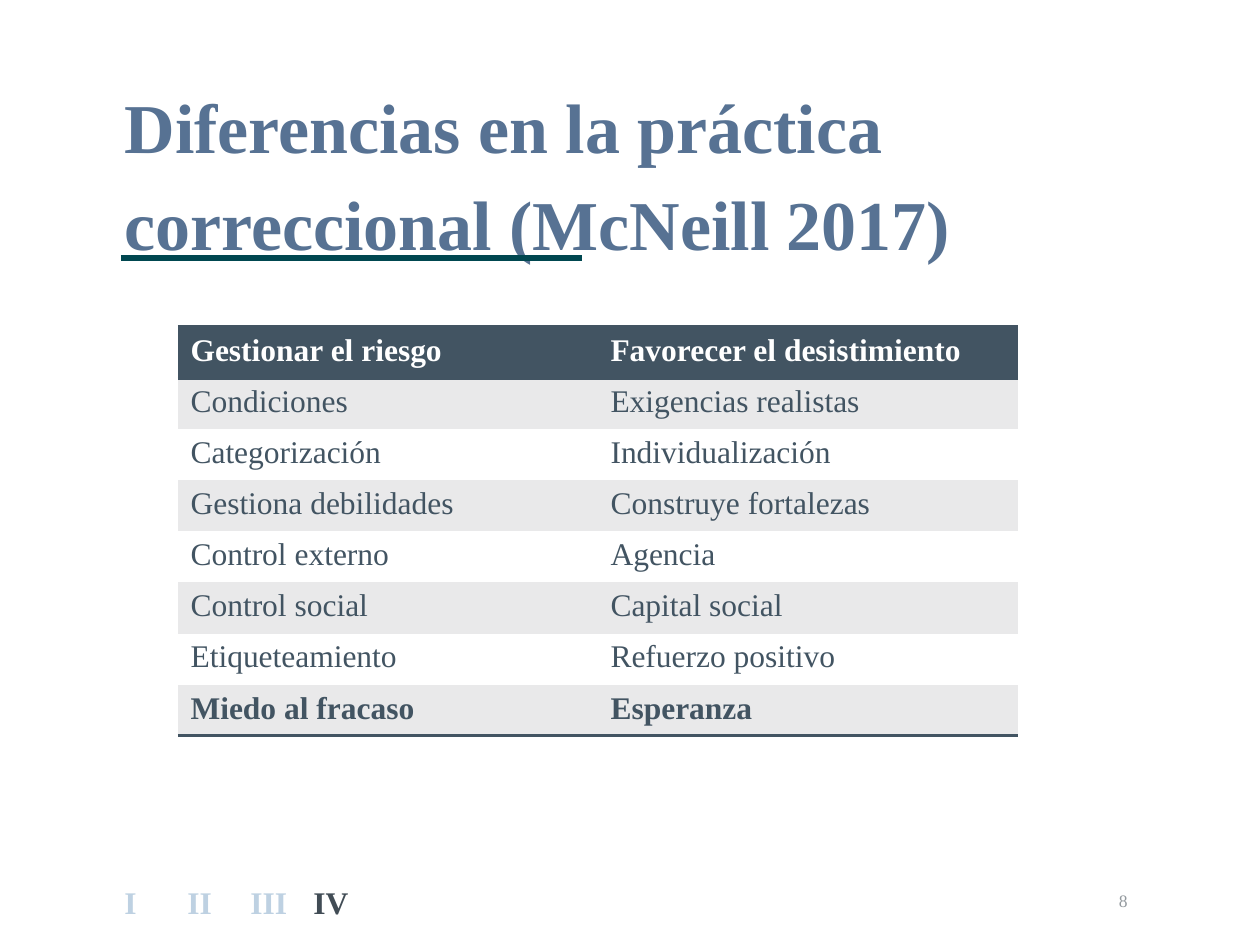
from lxml import etree
from pptx import Presentation
from pptx import util as u
from pptx.dml.color import RGBColor
from pptx.enum import shapes, text
from pptx.oxml.ns import qn

PX = 914400 / 126
FONT = "Times New Roman"
BLUE = RGBColor(0x57, 0x72, 0x93)
TEAL = RGBColor(0x00, 0x47, 0x50)
SLATE = RGBColor(0x42, 0x54, 0x62)
BAND = RGBColor(0xE9, 0xE9, 0xEA)
WHITE = RGBColor(0xFF, 0xFF, 0xFF)
PALE = RGBColor(0xBE, 0xD1, 0xE2)
DARK = RGBColor(0x41, 0x4C, 0x55)
GRAY = RGBColor(0x93, 0x99, 0x9E)

ROWS = [
    ("Gestionar el riesgo", "Favorecer el desistimiento"),
    ("Condiciones", "Exigencias realistas"),
    ("Categorización", "Individualización"),
    ("Gestiona debilidades", "Construye fortalezas"),
    ("Control externo", "Agencia"),
    ("Control social", "Capital social"),
    ("Etiqueteamiento", "Refuerzo positivo"),
    ("Miedo al fracaso", "Esperanza"),
]


def px(*vals):
    return [u.Emu(round(v * PX)) for v in vals]


def write(para, words, size=18, color=SLATE, bold=False):
    """Add one formatted run to a paragraph."""
    run = para.add_run()
    run.text = words
    run.font.name = FONT
    run.font.size = u.Pt(size)
    run.font.bold = bold
    run.font.color.rgb = color


def add_title(slide, x, y, w, h):
    title = slide.shapes.title
    title.left, title.top, title.width, title.height = px(x, y, w, h)
    frame = title.text_frame
    frame.auto_size = text.MSO_AUTO_SIZE.NONE
    frame.vertical_anchor = text.MSO_ANCHOR.TOP
    frame.margin_top, = px(12)
    para = frame.paragraphs[0]
    para.alignment = text.PP_ALIGN.LEFT
    para.line_spacing = 1.15
    write(para, "Diferencias en la práctica correccional (McNeill 2017)",
          size=40, color=BLUE, bold=True)


def add_rule(slide, x, y, w):
    line = slide.shapes.add_connector(
        shapes.MSO_CONNECTOR.STRAIGHT, *px(x, y, x + w, y))
    line.line.color.rgb = TEAL
    line.line.width = u.Pt(3)
    etree.SubElement(line._element.spPr, qn("a:effectLst"))


def add_edge(cell, side):
    """Draw a slate border on one side ('T' or 'B') of a cell."""
    props = cell._tc.get_or_add_tcPr()
    edge = etree.SubElement(props, qn(f"a:ln{side}"), w=str(u.Pt(2)))
    fill = etree.SubElement(edge, qn("a:solidFill"))
    etree.SubElement(fill, qn("a:srgbClr"), val=str(SLATE))


def add_grid(slide, x, y, w, h):
    last = len(ROWS) - 1
    grid = slide.shapes.add_table(len(ROWS), 2, *px(x, y, w, h)).table
    style = grid._tbl.tblPr.find(qn("a:tableStyleId"))
    style.text = "{2D5ABB26-0587-4C30-8999-92F81FD0307C}"  # no style, no grid
    for r, row in enumerate(ROWS):
        for c, words in enumerate(row):
            cell = grid.cell(r, c)
            if r == 0:
                add_edge(cell, "T")
            if r in (0, last):
                add_edge(cell, "B")
            cell.fill.solid()
            cell.fill.fore_color.rgb = (
                SLATE if r == 0 else BAND if r % 2 else WHITE)
            write(cell.text_frame.paragraphs[0], words,
                  color=WHITE if r == 0 else SLATE, bold=r in (0, last))


def add_steps(slide, x, y, w, h):
    """Place the section tracker, with the current section dark."""
    box = slide.shapes.add_textbox(*px(x, y, w, h))
    box.text_frame.word_wrap = True
    para = box.text_frame.paragraphs[0]
    tabs = etree.SubElement(para._p.get_or_add_pPr(), qn("a:tabLst"))
    for n in range(1, 4):
        etree.SubElement(tabs, qn("a:tab"), pos=str(px(63 * n)[0]), algn="l")
    write(para, "I\tII\tIII\t", color=PALE, bold=True)
    write(para, "IV", color=DARK, bold=True)


def add_number(slide, x, y, w, h):
    box = slide.shapes.add_textbox(*px(x, y, w, h))
    frame = box.text_frame
    frame.word_wrap = True
    frame.vertical_anchor = text.MSO_ANCHOR.MIDDLE
    para = frame.paragraphs[0]
    para.alignment = text.PP_ALIGN.RIGHT
    write(para, "8", size=10, color=GRAY)


def main():
    deck = Presentation()
    deck.slide_width, deck.slide_height = px(1260, 945)
    slide = deck.slides.add_slide(deck.slide_layouts[5])
    add_rule(slide, 121, 258, 461)
    add_steps(slide, 112, 877, 297, 50)
    add_title(slide, 112, 59, 1022, 188)
    add_number(slide, 847, 876, 293, 50)
    add_grid(slide, 178, 327, 840, 409)
    deck.save("out.pptx")


if __name__ == "__main__":
    main()
